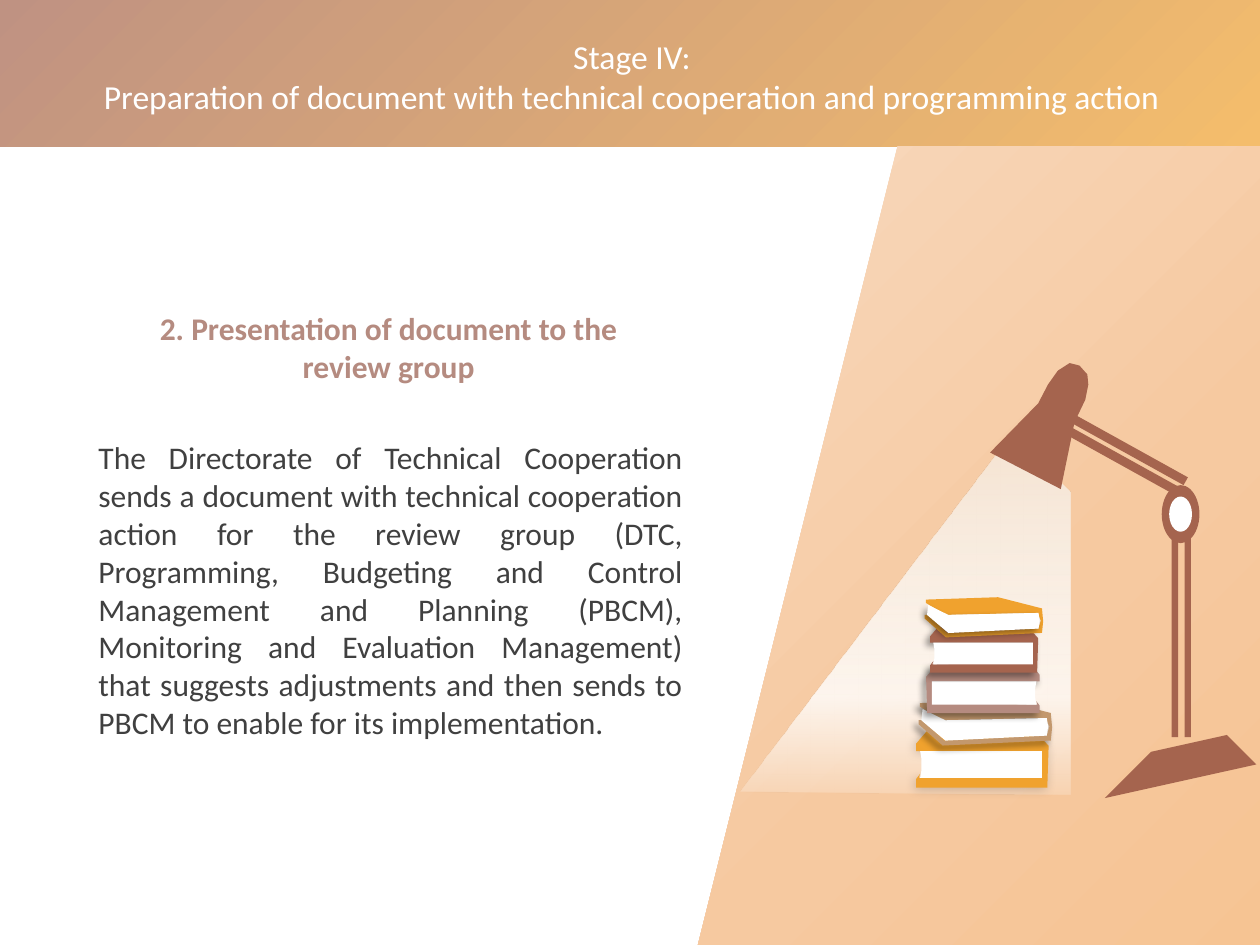
"""Build the Stage IV slide with its reading lamp and stack of books."""
from dataclasses import dataclass

import lxml.etree
import pptx
import pptx.dml.color
import pptx.enum.shapes
import pptx.enum.text
import pptx.oxml.ns
import pptx.util

Cm = pptx.util.Cm
SHAPE = pptx.enum.shapes.MSO_SHAPE
ALIGN = pptx.enum.text.PP_ALIGN
ANCHOR = pptx.enum.text.MSO_ANCHOR
qn = pptx.oxml.ns.qn


@dataclass(frozen=True)
class Theme:
    font: str = "Calibri"
    title_size: float = 19.2
    body_size: float = 18
    white: str = "FFFFFF"
    text: str = "404040"
    orange: str = "F0A22E"
    brown: str = "A5644E"
    rose: str = "B58B80"
    tan: str = "C3986D"
    panel: tuple = ((0, "F8D9BE", 100), (50, "F6C9A0", 100), (100, "F6C18C", 100))
    light: tuple = ((0, "FFFFFF", 20), (27, "FFFFFF", 80), (100, "F5E3D1", 100))
    band: tuple = ((0, "F0A22E", 70), (100, "A5644E", 70))
    soft_shadow: tuple = (20, 6, 1)
    shadow: tuple = (40, 4, 3)


THEME = Theme()

LIGHT = [(100, 16), (100, 100), (0, 99), (82, 0)]
LAMP_HEAD = [(91, 2), (81, 0), (69, 6), (59, 17), (49, 32), (0, 71),
             (72, 100), (86, 47), (97, 29), (100, 17), (99, 9)]
FLAT_BOOK = (
    [(9, 0), (0, 24), (0, 37), (95, 37), (95, 80), (2, 83), (3, 76), (0, 85),
     (0, 100), (99, 100), (100, 28), (89, 0)],
    [(3, 37), (95, 37), (95, 83), (3, 83), (4, 70), (4, 50)],
)
TILTED_BOOK = (
    [(3, 44), (0, 44), (0, 53), (18, 100), (99, 89), (100, 60), (99, 28), (62, 0),
     (1, 6), (1, 14), (18, 44), (95, 39), (98, 58), (96, 78), (19, 89)],
    [(3, 19), (2, 44), (20, 89), (96, 78), (97, 58), (96, 39), (20, 44)],
)


def sub(parent, tag, **attrs):
    """Append a DrawingML child element."""
    return lxml.etree.SubElement(parent, qn(tag), {k: str(v) for k, v in attrs.items()})


def add_color(parent, color, opacity):
    """Append a colour with its opacity in percent."""
    sub(sub(parent, "a:srgbClr", val=color), "a:alpha", val=opacity * 1000)


def paint(sp, fill, angle=0):
    """Give a shape a solid colour or gradient stops, without line or shadow."""
    sp.shadow.inherit = False
    sp.line.fill.background()
    if isinstance(fill, str):
        sp.fill.solid()
        sp.fill.fore_color.rgb = pptx.dml.color.RGBColor.from_string(fill)
        return
    sp.fill.background()
    spPr = sp._element.spPr
    grad = lxml.etree.Element(qn("a:gradFill"), rotWithShape="1")
    stops = sub(grad, "a:gsLst")
    for position, color, opacity in fill:
        add_color(sub(stops, "a:gs", pos=position * 1000), color, opacity)
    sub(grad, "a:lin", ang=angle * 60000, scaled=0)
    spPr.replace(spPr.find(qn("a:noFill")), grad)


def cast_shadow(sp, opacity, blur, distance):
    """Add an outer shadow falling to the lower left."""
    effects = sp._element.spPr.find(qn("a:effectLst"))
    shadow = sub(effects, "a:outerShdw", blurRad=blur * 12700, dist=distance * 12700,
                 dir=135 * 60000, algn="tr", rotWithShape=0)
    add_color(shadow, "000000", opacity)


def add_preset(s, kind, box, fill, angle=0, rotation=0):
    """Add a preset shape in a box given in centimetres."""
    sp = s.shapes.add_shape(kind, *map(Cm, box))
    sp.rotation = rotation
    paint(sp, fill, angle)
    return sp


def add_outline(s, points, box, fill, angle=0, mirrored=False):
    """Add a closed outline whose points are percentages of its box."""
    left, top, width, height = map(Cm, box)
    if mirrored:
        points = [(100 - x, y) for x, y in points]
    builder = s.shapes.build_freeform(*points[0], scale=(width / 100, height / 100))
    builder.add_line_segments(points[1:], close=True)
    sp = builder.convert_to_shape(left, top)
    paint(sp, fill, angle)
    return sp


def write(sp, box, lines, size, color, align, anchor=ANCHOR.TOP, bold=False):
    """Place a text shape and fill it with unbulleted paragraphs."""
    sp.left, sp.top, sp.width, sp.height = map(Cm, box)
    tf = sp.text_frame
    tf.word_wrap = True
    tf.auto_size = pptx.enum.text.MSO_AUTO_SIZE.NONE
    tf.vertical_anchor = anchor
    for i, line in enumerate(lines):
        p = tf.add_paragraph() if i else tf.paragraphs[0]
        p.alignment = align
        p.space_before = pptx.util.Pt(0)
        pPr = p._p.get_or_add_pPr()
        pPr.set("marL", "0")
        pPr.set("indent", "0")
        sub(pPr, "a:buNone")
        r = p.add_run()
        r.text = line
        r.font.name = THEME.font
        r.font.size = pptx.util.Pt(size)
        r.font.bold = bold
        r.font.color.rgb = pptx.dml.color.RGBColor.from_string(color)


def add_texts(s):
    """Write the title, the subheading and the body."""
    write(s.shapes.title, (0.69, 0.53, 24.1, 2.01),
          ["Stage IV:",
           "Preparation of document with technical cooperation and programming action"],
          THEME.title_size, THEME.white, ALIGN.CENTER, ANCHOR.MIDDLE)
    write(s.placeholders[1], (1.73, 8.71, 12.29, 6.4),
          ["The Directorate of Technical Cooperation sends a document with technical "
           "cooperation action for the review group (DTC, Programming, Budgeting and "
           "Control Management and Planning (PBCM), Monitoring and Evaluation "
           "Management) that suggests adjustments and then sends to PBCM to enable "
           "for its implementation."],
          THEME.body_size, THEME.text, ALIGN.JUSTIFY)
    box = (2.54, 6.1, 10.59, 1.8)
    write(s.shapes.add_textbox(*map(Cm, box)), box,
          ["2. Presentation of document to the review group"],
          THEME.body_size, THEME.rose, ALIGN.CENTER, bold=True)


def add_lamp(s):
    """Draw the light beam and the desk lamp."""
    add_outline(s, LIGHT, (14.94, 8.76, 6.63, 7.26), THEME.light, 270)
    for left, top in ((22.56, 7.57), (22.48, 7.82)):
        add_preset(s, SHAPE.RECTANGLE, (left, top, 0.18, 2.87), THEME.brown, rotation=299)
    for left in (23.62, 23.88):
        add_preset(s, SHAPE.RECTANGLE, (left, 10.36, 0.13, 4.5), THEME.brown)
    add_preset(s, SHAPE.OVAL, (23.42, 9.78, 0.76, 1.17), THEME.brown)
    add_preset(s, SHAPE.OVAL, (23.57, 10.01, 0.46, 0.71), THEME.white)
    add_outline(s, LAMP_HEAD, (19.96, 7.32, 1.98, 2.54), THEME.brown)
    add_preset(s, SHAPE.DIAGONAL_STRIPE, (22.96, 14.43, 1.68, 2.64), THEME.brown, rotation=45)


def add_book(s, outlines, box, color, shadow, mirrored=False, shadow_on_pages=False):
    """Draw one book as a cover with white pages."""
    cover, pages = (add_outline(s, points, box, fill, mirrored=mirrored)
                    for points, fill in zip(outlines, (color, THEME.white)))
    cast_shadow(pages if shadow_on_pages else cover, *shadow)


def add_books(s):
    """Stack the five books from the bottom up."""
    add_book(s, FLAT_BOOK, (18.47, 14.71, 2.67, 1.17), THEME.orange, THEME.soft_shadow)
    add_book(s, TILTED_BOOK, (18.52, 14.12, 2.69, 0.91), THEME.tan, THEME.shadow)
    add_book(s, FLAT_BOOK, (18.67, 13.36, 2.29, 1.02), THEME.rose, THEME.shadow, mirrored=True)
    add_book(s, FLAT_BOOK, (18.75, 12.6, 2.18, 0.96), THEME.brown, THEME.shadow)
    add_book(s, TILTED_BOOK, (18.64, 12.04, 2.39, 0.81), THEME.orange, THEME.shadow,
             shadow_on_pages=True)


def main():
    """Build and save the presentation."""
    prs = pptx.Presentation()
    prs.slide_width, prs.slide_height = Cm(25.4), Cm(19.05)
    s = prs.slides.add_slide(prs.slide_layouts[1])
    band = add_preset(s, SHAPE.RECTANGLE, (0, 0, 25.4, 2.95), THEME.band, 225)
    s.shapes._spTree.insert(2, band._element)
    add_preset(s, SHAPE.TRAPEZOID, (14.07, 2.95, 16.56, 16.1), THEME.panel, 45)
    add_texts(s)
    add_lamp(s)
    add_books(s)
    prs.save("out.pptx")


if __name__ == "__main__":
    main()
